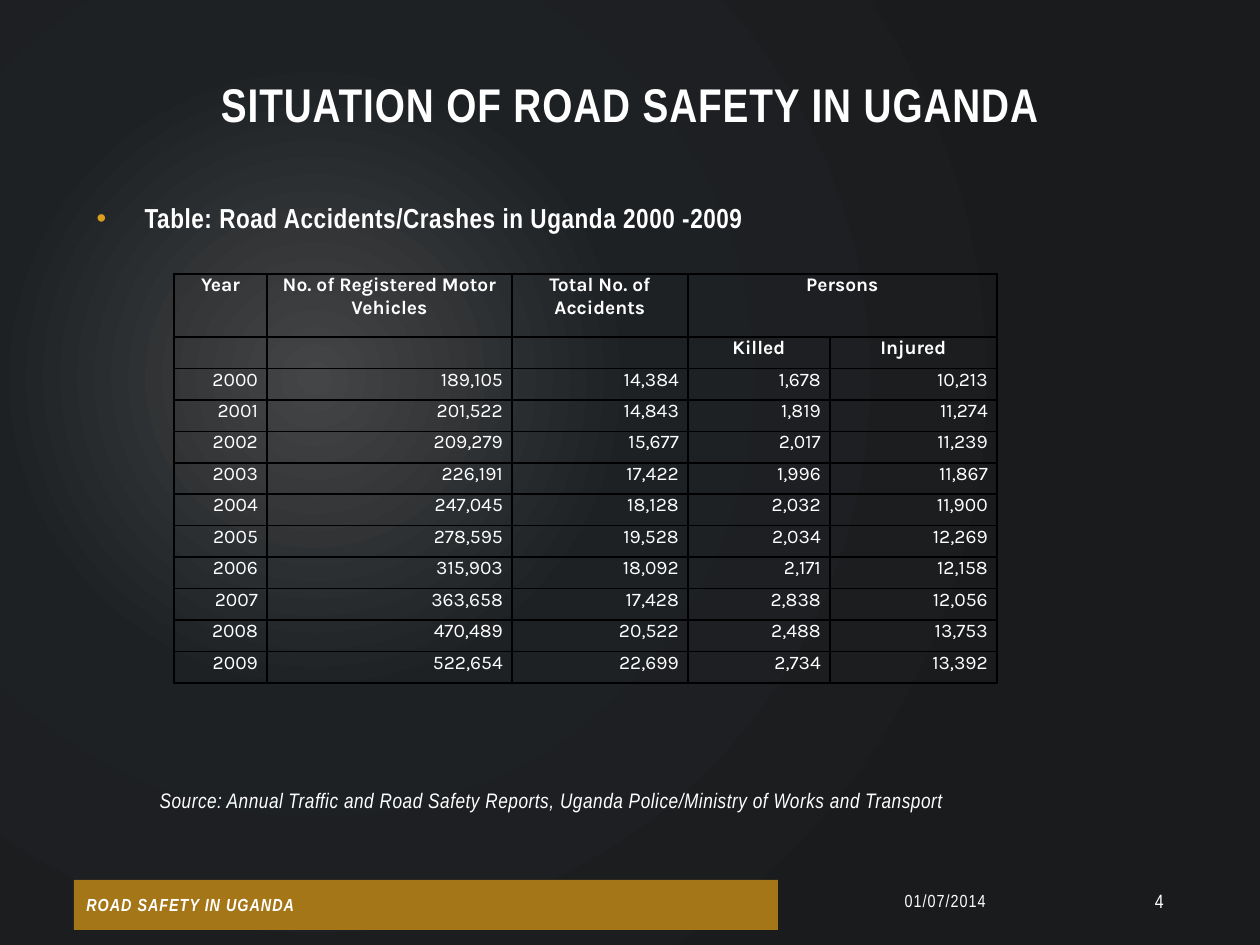
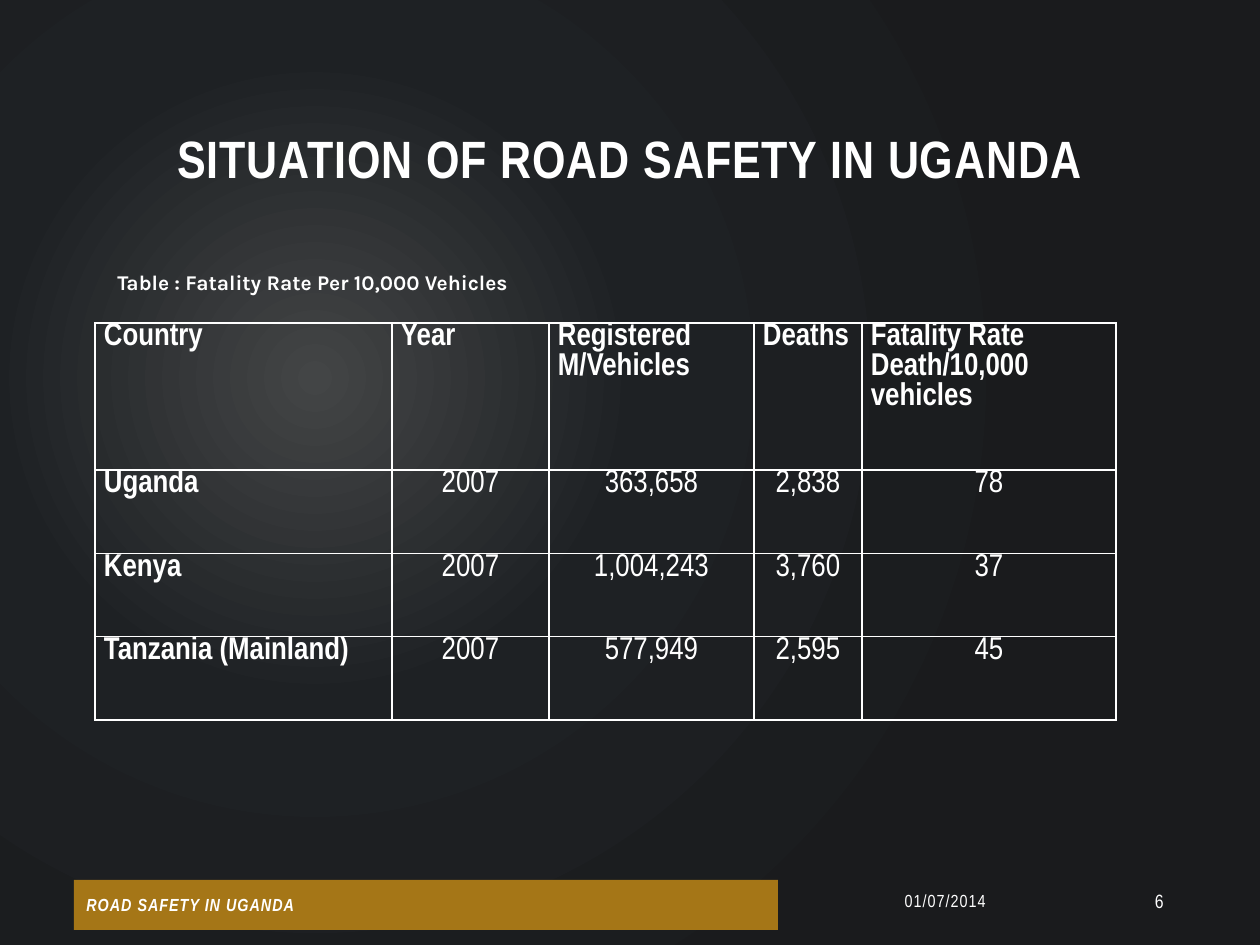
from lxml import etree
from pptx import Presentation
from pptx.dml.color import RGBColor
from pptx.enum import shapes, text
from pptx.oxml import parse_xml
from pptx.oxml.ns import nsdecls, qn
from pptx.util import Pt

# Shared look
WHITE = RGBColor(0xFF, 0xFF, 0xFF)
BLACK = RGBColor(0x00, 0x00, 0x00)
GOLD = RGBColor(0xA5, 0x76, 0x17)
BULLET = RGBColor(0xDC, 0x9E, 0x1F)
GLOW = [(0, RGBColor(0x43, 0x45, 0x46)), (41, RGBColor(0x1E, 0x21, 0x24)),
        (100, RGBColor(0x1A, 0x1B, 0x1D))]
NARROW, KARLA = "Arial Narrow", "Karla"
LEFT, CENTER, RIGHT, JUSTIFY = (text.PP_ALIGN.LEFT, text.PP_ALIGN.CENTER,
                                text.PP_ALIGN.RIGHT, text.PP_ALIGN.JUSTIFY)
MIDDLE, BOTTOM = text.MSO_ANCHOR.MIDDLE, text.MSO_ANCHOR.BOTTOM
SCALE = 914400 / 126
TITLE = "SITUATION OF ROAD SAFETY IN UGANDA"


def px(n):
    return round(n * SCALE)


def write(p, words, size, font=NARROW, bold=False, italic=False, align=LEFT,
          spacing=0, before=0):
    p.alignment = align
    p.space_before, p.space_after, p.line_spacing = Pt(before), Pt(0), 1.0
    if not words:
        etree.SubElement(p._p, qn("a:endParaRPr"), sz=str(size * 100))
        return
    r = p.add_run()
    r.text = words
    r.font.name, r.font.size = font, Pt(size)
    r.font.bold, r.font.italic = bold, italic
    r.font.color.rgb = WHITE
    if spacing:
        r._r.get_or_add_rPr().set("spc", str(round(spacing * 100)))


prs = Presentation()
prs.slide_width, prs.slide_height = px(1260), px(945)

# Radial background on the master
stops = "".join(f'<a:gs pos="{pos * 1000}"><a:srgbClr val="{color}"/></a:gs>'
                for pos, color in GLOW)
cSld = prs.slide_master._element.cSld
cSld.remove(cSld.find(qn("p:bg")))
cSld.insert(0, parse_xml(
    f'<p:bg {nsdecls("p", "a")}><p:bgPr><a:gradFill rotWithShape="1">'
    f'<a:gsLst>{stops}</a:gsLst><a:path path="circle">'
    '<a:fillToRect l="50000" t="80000" r="100000" b="100000"/></a:path>'
    '</a:gradFill><a:effectLst/></p:bgPr></p:bg>'))

# Table contents
crashes = [
    ["Year", "No. of Registered Motor Vehicles", "Total No. of Accidents", "Persons", ""],
    ["", "", "", "Killed", "Injured"],
    ["2000", "189,105", "14,384", "1,678", "10,213"],
    ["2001", "201,522", "14,843", "1,819", "11,274"],
    ["2002", "209,279", "15,677", "2,017", "11,239"],
    ["2003", "226,191", "17,422", "1,996", "11,867"],
    ["2004", "247,045", "18,128", "2,032", "11,900"],
    ["2005", "278,595", "19,528", "2,034", "12,269"],
    ["2006", "315,903", "18,092", "2,171", "12,158"],
    ["2007", "363,658", "17,428", "2,838", "12,056"],
    ["2008", "470,489", "20,522", "2,488", "13,753"],
    ["2009", "522,654", "22,699", "2,734", "13,392"],
]
fatalities = [
    ["Country", "Year", "Registered M/Vehicles", "Deaths",
     "Fatality Rate Death/10,000 vehicles"],
    ["Uganda", "2007", "363,658", "2,838", "78"],
    ["Kenya", "2007", "1,004,243", "3,760", "37"],
    ["Tanzania (Mainland)", "2007", "577,949", "2,595", "45"],
]

pages = [
    dict(number="4", layout=1, title_top=65, title_size=27, title_inset=63,
         rows=crashes, at=(174, 274), cols=[93, 245, 176, 142, 167],
         head_height=63, rest_height=346, head_rows=2, bold_cols=0,
         head_align=CENTER, align=RIGHT, border=BLACK,
         format=dict(size=11, font=KARLA)),
    dict(number="6", layout=5, title_top=38, title_size=30, title_inset=6,
         rows=fatalities, at=(95, 323), cols=[297, 157, 205, 108, 254],
         head_height=147, rest_height=250, head_rows=1, bold_cols=1,
         head_align=LEFT, align=CENTER, border=WHITE,
         format=dict(size=18)),
]

for page in pages:
    s = prs.slides.add_slide(prs.slide_layouts[page["layout"]])

    # Title
    sp = s.shapes.title
    sp.left, sp.top = px(84), px(page["title_top"])
    sp.width, sp.height = px(1092), px(195 - page["title_top"])
    tf = sp.text_frame
    tf.auto_size, tf.vertical_anchor = text.MSO_AUTO_SIZE.NONE, BOTTOM
    tf.margin_bottom = px(page["title_inset"])
    write(tf.paragraphs[0], TITLE, page["title_size"], bold=True,
          align=CENTER, spacing=0.5)

    # Table
    rows, cols = page["rows"], page["cols"]
    left, top = page["at"]
    table = s.shapes.add_table(
        len(rows), len(cols), px(left), px(top), px(sum(cols)),
        px(page["head_height"] + page["rest_height"])).table
    table.first_row = table.horz_banding = False
    for column, width in zip(table.columns, cols):
        column.width = px(width)
    for i, row in enumerate(rows):
        table.rows[i].height = (px(page["rest_height"]) // (len(rows) - 1) if i
                                else px(page["head_height"]))
        for j, words in enumerate(row):
            cell = table.cell(i, j)
            cell.margin_left = cell.margin_right = px(9)
            cell.margin_top = cell.margin_bottom = 0
            head, label = i < page["head_rows"], j < page["bold_cols"]
            align = page["head_align"] if head else LEFT if label else page["align"]
            write(cell.text_frame.paragraphs[0], words, bold=head or label,
                  align=align, **page["format"])
            tcPr = cell._tc.get_or_add_tcPr()
            for side in ("lnL", "lnR", "lnT", "lnB"):
                tcPr.append(parse_xml(
                    f'<a:{side} {nsdecls("a")} w="12700"><a:solidFill>'
                    f'<a:srgbClr val="{page["border"]}"/></a:solidFill></a:{side}>'))
            cell.fill.background()
    if rows is crashes:
        table.cell(0, 3).merge(table.cell(0, 4))

    # Footer: gold band, date and page number
    band = s.shapes.add_shape(shapes.MSO_SHAPE.RECTANGLE,
                              px(74), px(880), px(704), px(50))
    band.shadow.inherit = False
    band.fill.solid()
    band.fill.fore_color.rgb = GOLD
    band.line.fill.background()
    band.text_frame.vertical_anchor = MIDDLE
    write(band.text_frame.paragraphs[0], "ROAD SAFETY IN UGANDA", 10,
          bold=True, italic=True, spacing=0.6)
    for words, left, width, size, spacing in [("01/07/2014", 788, 210, 10, 0.6),
                                              (page["number"], 1040, 136, 11, 0)]:
        tf = s.shapes.add_textbox(px(left), px(876), px(width), px(50)).text_frame
        tf.word_wrap, tf.vertical_anchor = True, MIDDLE
        write(tf.paragraphs[0], words, size, align=RIGHT, spacing=spacing)

# Crash slide: bulleted heading and source line
body = prs.slides[0].placeholders[1]
body.left, body.top, body.width, body.height = px(84), px(195), px(1092), px(592)
tf = body.text_frame
tf.auto_size = text.MSO_AUTO_SIZE.NONE
heading, source = tf.paragraphs[0], tf.add_paragraph()
source.level = 1
for p, margin, indent in [(heading, 48, -48), (source, 63, 0)]:
    pPr = p._p.get_or_add_pPr()
    pPr.set("marL", str(px(margin)))
    pPr.set("indent", str(px(indent)))
pPr = heading._p.pPr
color = etree.SubElement(pPr, qn("a:buClr"))
etree.SubElement(color, qn("a:srgbClr"), val=str(BULLET))
etree.SubElement(pPr, qn("a:buFont"), typeface="Arial")
etree.SubElement(pPr, qn("a:buChar"), char="•")
etree.SubElement(source._p.pPr, qn("a:buNone"))
write(heading, "Table: Road Accidents/Crashes in Uganda 2000 -2009", 15.7,
      bold=True, spacing=0.3)
write(source, "Source: Annual Traffic and Road Safety Reports, "
      "Uganda Police/Ministry of Works and Transport", 12,
      italic=True, spacing=0.3, before=316)

# Fatality slide: table caption
tf = prs.slides[1].shapes.add_textbox(px(105), px(263), px(556), px(38)).text_frame
tf.word_wrap, tf.vertical_anchor = True, MIDDLE
write(tf.paragraphs[0], "Table : Fatality Rate Per 10,000 Vehicles", 12,
      font=KARLA, bold=True, align=JUSTIFY)

prs.save("out.pptx")
